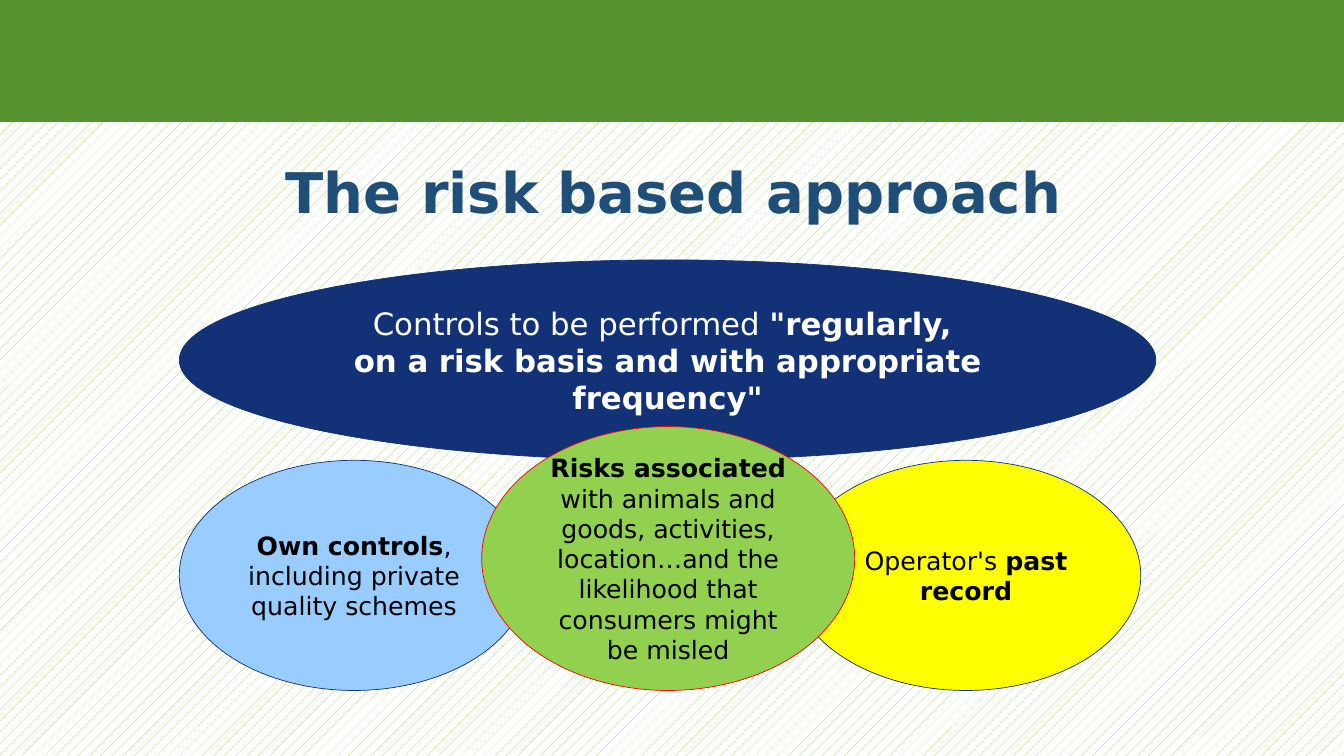
from pptx import Presentation
from pptx.dml.color import RGBColor
from pptx.enum.dml import MSO_PATTERN
from pptx.enum.shapes import MSO_SHAPE
from pptx.enum.text import MSO_ANCHOR, PP_ALIGN
from pptx.util import Cm, Pt

COLORS = {
    "banner": "56932F", "title": "1F4E79", "navy": "133176",
    "yellow": "FFFF00", "sky": "99CCFF", "green": "92D050",
    "red": "FF0000", "black": "000000", "white": "FFFFFF",
}


class Deck:
    """Holds the style and the current slide."""

    face = "DejaVu Sans"

    def __init__(self):
        self.show = Presentation()
        self.show.slide_width = Cm(33.87)
        self.show.slide_height = Cm(19.05)
        self.slide = self.show.slides.add_slide(self.show.slide_layouts[5])

    def color(self, name):
        return RGBColor.from_string(COLORS[name])

    def ground(self, front, back):
        fill = self.slide.background.fill
        fill.patterned()
        fill.pattern = MSO_PATTERN.PERCENT_10
        fill.fore_color.rgb = self.color(front)
        fill.back_color.rgb = self.color(back)

    def style(self, para, size, color):
        para.alignment = PP_ALIGN.CENTER
        para.font.name = self.face
        para.font.size = Pt(size)
        para.font.color.rgb = self.color(color)

    def title(self, text, box):
        shape = self.slide.shapes.title
        shape.left, shape.top, shape.width, shape.height = map(Cm, box)
        frame = shape.text_frame
        frame.text = text
        frame.word_wrap = True
        frame.vertical_anchor = MSO_ANCHOR.MIDDLE
        para = frame.paragraphs[0]
        self.style(para, 40, "title")
        para.font.bold = True
        para.line_spacing = 0.9

    def shape(self, kind, box, fill, line=None):
        shape = self.slide.shapes.add_shape(kind, *map(Cm, box))
        shape.shadow.inherit = False
        shape.fill.solid()
        shape.fill.fore_color.rgb = self.color(fill)
        if line:
            shape.line.color.rgb = self.color(line)
            shape.line.width = Pt(0.5)
        else:
            shape.line.fill.background()
        return shape

    def oval(self, box, fill, runs, line="navy", size=18, ink="black"):
        frame = self.shape(MSO_SHAPE.OVAL, box, fill, line).text_frame
        frame.word_wrap = True
        frame.vertical_anchor = MSO_ANCHOR.MIDDLE
        para = frame.paragraphs[0]
        for text, bold in runs:
            for row, part in enumerate(text.split("\n")):
                if row:
                    para.add_line_break()
                run = para.add_run()
                run.text = part
                run.font.bold = bold
        self.style(para, size, ink)


def main():
    deck = Deck()
    deck.ground("green", "white")
    deck.shape(MSO_SHAPE.RECTANGLE, (0, 0, 33.87, 3.07), "banner")
    deck.title("The risk based approach", (5.54, 3.73, 22.86, 2.41))
    deck.oval((19.94, 11.6, 8.81, 5.8), "yellow",
              [("Operator's ", False), ("past record", True)])
    deck.oval((4.52, 11.6, 8.81, 5.8), "sky",
              [("Own controls", True),
               (", including private quality schemes", False)])
    deck.oval((4.52, 6.55, 24.61, 5.05), "navy",
              [("Controls to be performed ", False),
               ('"regularly, \non a risk basis and with appropriate frequency"', True)],
              size=22, ink="white")
    deck.oval((12.14, 10.75, 9.4, 6.65), "green",
              [("Risks associated ", True),
               ("with animals and goods, activities, location…and the "
                "likelihood that consumers might be misled", False)],
              line="red")
    deck.show.save("out.pptx")


if __name__ == "__main__":
    main()
